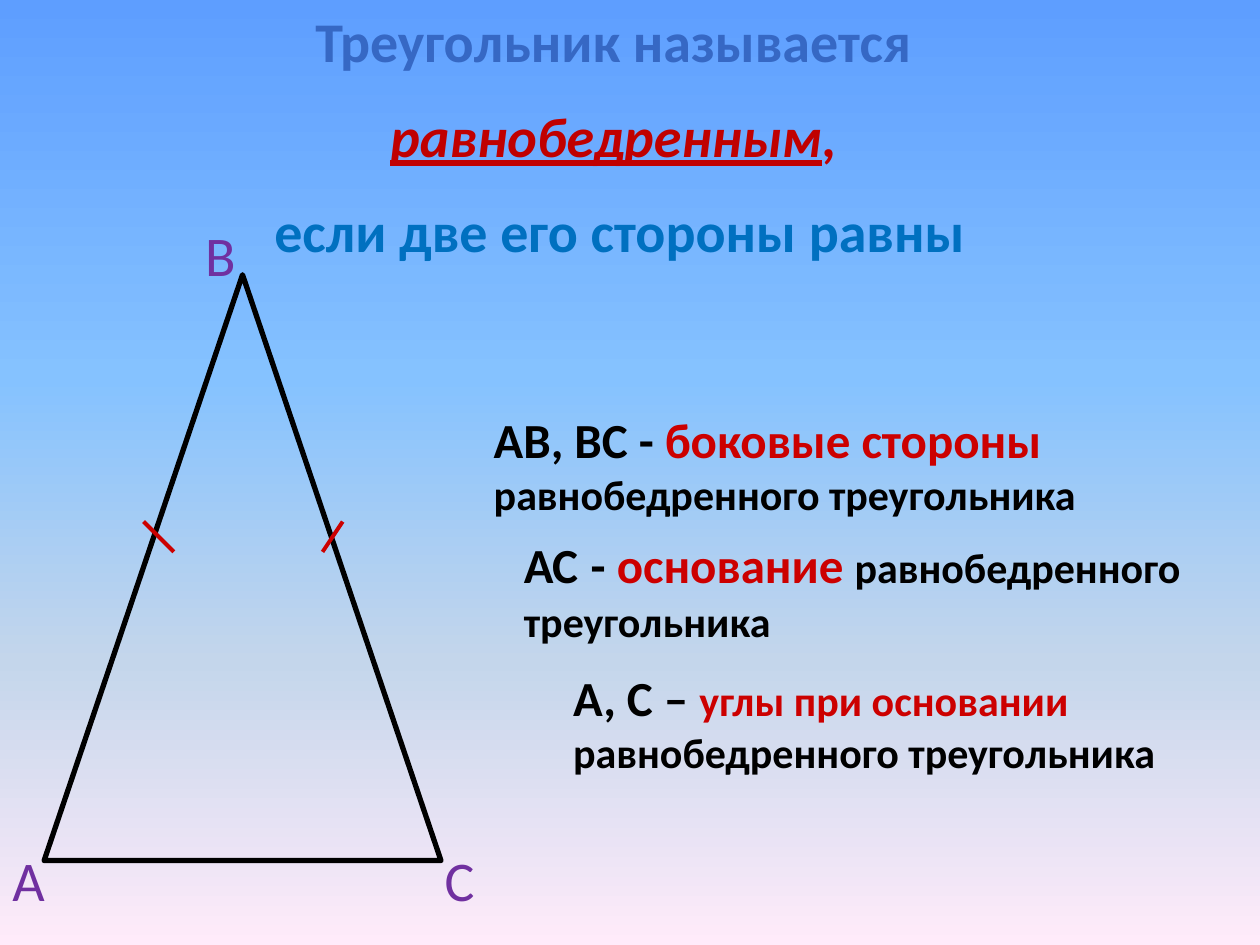
import pptx
import pptx.dml.color
import pptx.enum.shapes
import pptx.enum.text
import pptx.oxml
import pptx.oxml.ns
import pptx.util
from dataclasses import dataclass
from lxml import etree


@dataclass(frozen=True)
class Theme:
    font: str = "Calibri"
    large: int = 32
    medium: int = 28
    small: int = 24
    ink: str = "000000"
    accent: str = "CC0000"
    vertex: str = "7030A0"
    title: str = "3668C4"
    term: str = "C00000"
    condition: str = "0070C0"
    outline: float = 3
    tick: float = 2.25
    sky: tuple = ((0, "5E9EFF"), (40, "85C2FF"), (70, "C4D6EB"), (100, "FFEBFA"))


THEME = Theme()
WIDTH, HEIGHT = pptx.util.Inches(10), pptx.util.Inches(7.5)

# Positions are percentages of the slide's width and height.
TRIANGLE = (3.5, 29.07, 31.5, 62)
TICKS = [(11.4, 55.2, 13.8, 58.4), (27.2, 55.2, 25.6, 58.4)]
VERTICES = [
    ("А", (0, 88.8, 8.7, 8.4)),
    ("В", (15.3, 22.67, 6.3, 8.4)),
    ("С", (34.3, 88.8, 11, 8.4)),
]
FACTS = [
    ((38.2, 42.67, 61.8, 12.93), [
        ("АВ, ВС - ", THEME.medium, THEME.ink),
        ("боковые стороны ", THEME.medium, THEME.accent),
        ("равнобедренного треугольника", THEME.small, THEME.ink),
    ]),
    ((44.5, 70, 52.8, 12.93), [
        ("А, С – ", THEME.medium, THEME.ink),
        ("углы при основании ", THEME.small, THEME.accent),
        ("равнобедренного треугольника", THEME.small, THEME.ink),
    ]),
    ((40.6, 55.2, 59.4, 13.87), [
        ("АС", THEME.medium, THEME.ink),
        (" ", THEME.large, THEME.ink),
        ("- ", THEME.medium, THEME.ink),
        ("основание ", THEME.medium, THEME.accent),
        ("равнобедренного треугольника", THEME.small, THEME.ink),
    ]),
]
TITLE_BOX = (5.1, 0, 88.2, 30.13)
TITLE = [
    ([("Треугольник называется ", False)], THEME.title, False),
    ([("равнобедренным", True), (", ", False)], THEME.term, True),
    ([("если две его стороны равны", False)], THEME.condition, False),
]


def place(box):
    return [round(share * side / 100) for share, side in zip(box, (WIDTH, HEIGHT) * 2)]


def color(value):
    return pptx.dml.color.RGBColor.from_string(value)


def paint_background(slide):
    fill = slide.background.fill
    fill.gradient()
    fill.gradient_angle = 270
    stops = slide.element.find(".//" + pptx.oxml.ns.qn("a:gsLst"))
    for stop in list(stops):
        stops.remove(stop)
    for position, value in THEME.sky:
        stop = etree.SubElement(stops, pptx.oxml.ns.qn("a:gs"), pos=str(position * 1000))
        etree.SubElement(stop, pptx.oxml.ns.qn("a:srgbClr"), val=value)


def draw_line(line, value, width):
    line.color.rgb = color(value)
    line.width = pptx.util.Pt(width)


def add_text_frame(slide, box):
    frame = slide.shapes.add_textbox(*place(box)).text_frame
    frame.word_wrap = True
    return frame


def style(font, size, value, bold=False):
    font.name = THEME.font
    font.size = pptx.util.Pt(size)
    font.color.rgb = color(value)
    font.bold = bold


def add_triangle(slide):
    kind = pptx.enum.shapes.MSO_SHAPE.ISOSCELES_TRIANGLE
    triangle = slide.shapes.add_shape(kind, *place(TRIANGLE))
    triangle.shadow.inherit = False
    triangle.fill.background()
    draw_line(triangle.line, THEME.ink, THEME.outline)
    for ends in TICKS:
        straight = pptx.enum.shapes.MSO_CONNECTOR.STRAIGHT
        tick = slide.shapes.add_connector(straight, *place(ends))
        draw_line(tick.line, THEME.accent, THEME.tick)
        properties = tick.element.find(pptx.oxml.ns.qn("p:spPr"))
        etree.SubElement(properties, pptx.oxml.ns.qn("a:effectLst"))
    for letter, box in VERTICES:
        paragraph = add_text_frame(slide, box).paragraphs[0]
        paragraph.text = letter
        style(paragraph.font, THEME.large, THEME.vertex)


def add_facts(slide):
    for box, pieces in FACTS:
        paragraph = add_text_frame(slide, box).paragraphs[0]
        for text, size, value in pieces:
            run = paragraph.add_run()
            run.text = text
            style(run.font, size, value, bold=True)


def add_title(slide):
    frame = add_text_frame(slide, TITLE_BOX)
    for index, (pieces, value, italic) in enumerate(TITLE):
        paragraph = frame.add_paragraph() if index else frame.paragraphs[0]
        paragraph.alignment = pptx.enum.text.PP_ALIGN.CENTER
        if index:
            paragraph.space_before = pptx.util.Pt(THEME.large / 2)
        style(paragraph.font, THEME.large, value, bold=True)
        paragraph.font.italic = italic
        for text, underlined in pieces:
            run = paragraph.add_run()
            run.text = text
            if underlined:
                run.font.underline = True


def main():
    presentation = pptx.Presentation()
    presentation.slide_width, presentation.slide_height = WIDTH, HEIGHT
    slide = presentation.slides.add_slide(presentation.slide_layouts[6])
    paint_background(slide)
    add_triangle(slide)
    add_facts(slide)
    add_title(slide)
    presentation.save("out.pptx")


if __name__ == "__main__":
    main()
